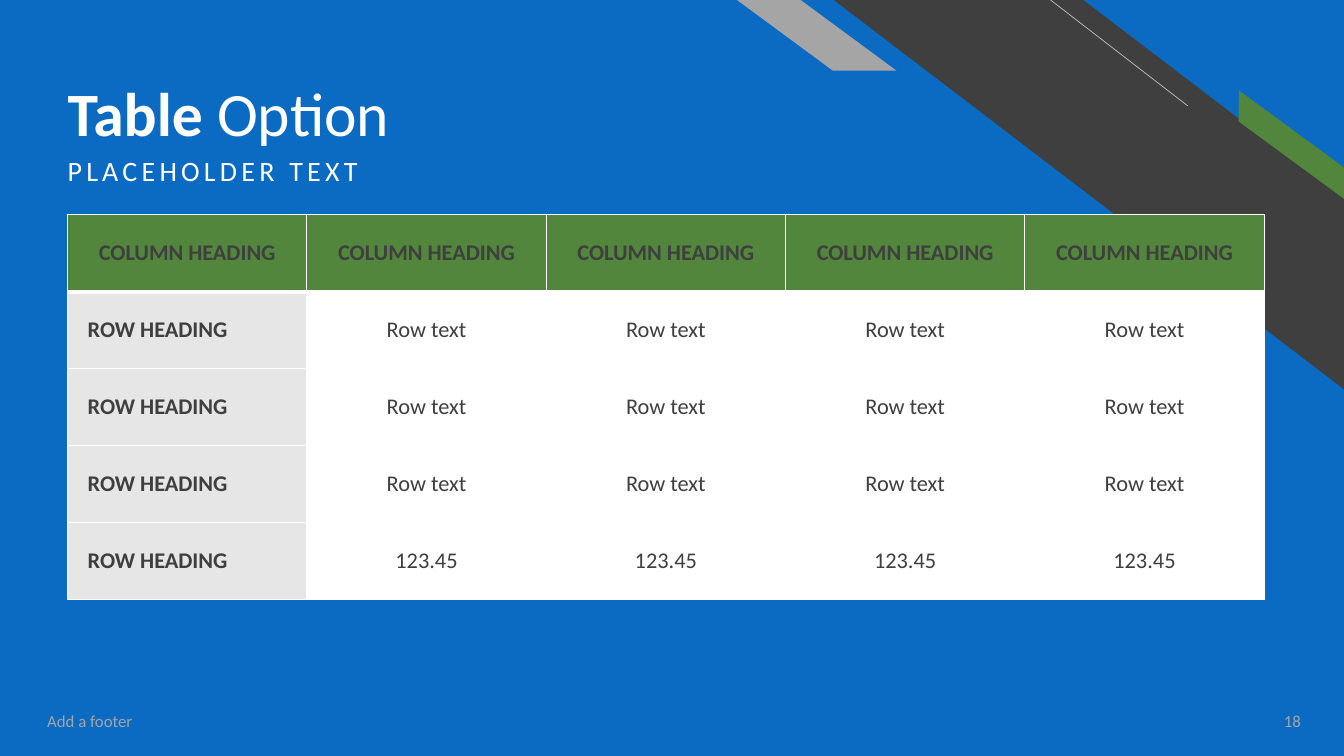
from pptx import Presentation
from pptx.dml.color import RGBColor
from pptx.enum.shapes import MSO_CONNECTOR, MSO_SHAPE
from pptx.enum.text import MSO_ANCHOR, MSO_AUTO_SIZE, PP_ALIGN
from pptx.oxml.ns import qn
from pptx.util import Inches, Pt
from lxml.etree import SubElement

COLOURS = {
    "blue": "0B6BC3",
    "charcoal": "3E3F3E",
    "green": "51863C",
    "grey": "A5A5A5",
    "hairline": "BFBFBF",
    "row_heading": "E6E6E6",
    "table_text": "3F3F3F",
    "white": "FFFFFF",
}
FONT = "Calibri"
COLUMNS = 5
TABLE_ROWS = [
    ["COLUMN HEADING"] * COLUMNS,
    *[["ROW HEADING"] + ["Row text"] * (COLUMNS - 1) for _ in range(3)],
    ["ROW HEADING"] + ["123.45"] * (COLUMNS - 1),
]


def rgb(name):
    return RGBColor.from_string(COLOURS[name])


def set_attributes(target, values):
    for attribute, value in values.items():
        setattr(target, attribute, value)


def place(shape, left, top, width, height):
    box = {"left": left, "top": top, "width": width, "height": height}
    set_attributes(shape, {side: Inches(size) for side, size in box.items()})


def add_run(paragraph, text, size, colour, bold=False):
    run = paragraph.add_run()
    run.text = text
    set_attributes(run.font, {"name": FONT, "size": Pt(size), "bold": bold})
    run.font.color.rgb = rgb(colour)
    return run


def add_block(slide, preset, box, colour, slant=None, flipped=False, rotation=0):
    """Add a plain filled shape; slant is its first adjustment."""
    block = slide.shapes.add_shape(preset, *map(Inches, box))
    block.fill.solid()
    block.fill.fore_color.rgb = rgb(colour)
    block.line.fill.background()
    block.shadow.inherit = False
    block.rotation = rotation
    if slant is not None:
        block.adjustments[0] = slant
    if flipped:
        block.element.spPr.find(qn("a:xfrm")).set("flipH", "1")


def add_hairline(slide, start, end):
    hairline = slide.shapes.add_connector(
        MSO_CONNECTOR.STRAIGHT, *map(Inches, start + end))
    hairline.line.color.rgb = rgb("hairline")
    hairline.line.width = Pt(0.5)
    SubElement(hairline.element.spPr, qn("a:effectLst"))


def add_backdrop(slide):
    add_block(slide, MSO_SHAPE.RECTANGLE, (0, 0, 13.33, 7.5), "blue")
    add_block(slide, MSO_SHAPE.DIAGONAL_STRIPE, (8.27, 0, 5.07, 3.87),
              "charcoal", slant=0.512, flipped=True)
    add_hairline(slide, (11.78, 1.05), (10.42, 0))
    add_block(slide, MSO_SHAPE.PARALLELOGRAM, (12.07, 1.31, 1.48, 0.25),
              "green", slant=0.72, flipped=True, rotation=36.3)
    add_block(slide, MSO_SHAPE.PARALLELOGRAM, (7.31, 0, 1.58, 0.7),
              "grey", slant=1.356, flipped=True)


def format_placeholder(placeholder, box, anchor, space_before=0):
    """Bring a placeholder above the backdrop and return its paragraph."""
    tree = placeholder.element.getparent()
    tree.append(placeholder.element)
    place(placeholder, *box)
    set_attributes(placeholder.text_frame, {
        "vertical_anchor": anchor,
        "word_wrap": True,
        "auto_size": MSO_AUTO_SIZE.NONE,
    })
    paragraph = placeholder.text_frame.paragraphs[0]
    set_attributes(paragraph, {
        "alignment": PP_ALIGN.LEFT,
        "line_spacing": 0.9,
        "space_before": Pt(space_before),
    })
    return paragraph


def fill_title(title):
    paragraph = format_placeholder(title, (0.57, 0.23, 9.11, 1.26), MSO_ANCHOR.BOTTOM)
    title.text_frame.margin_bottom = 0
    add_run(paragraph, "Table ", 44, "white", bold=True)
    add_run(paragraph, "Option", 44, "white")


def fill_subtitle(subtitle):
    paragraph = format_placeholder(
        subtitle, (0.57, 1.51, 8.06, 0.67), MSO_ANCHOR.TOP, space_before=10)
    properties = paragraph._p.get_or_add_pPr()
    properties.set("marL", "0")
    properties.set("indent", "0")
    SubElement(properties, qn("a:buNone"))
    run = add_run(paragraph, "PLACEHOLDER TEXT", 20, "white")
    run.font._element.set("spc", "300")


def add_footer_text(slide, text, box, alignment):
    footer = slide.shapes.add_textbox(*map(Inches, box))
    set_attributes(footer.text_frame, {
        "word_wrap": True, "vertical_anchor": MSO_ANCHOR.MIDDLE})
    paragraph = footer.text_frame.paragraphs[0]
    paragraph.alignment = alignment
    add_run(paragraph, text, 12, "grey")


def add_borders(cell, widths):
    """Draw white borders; widths maps L, R, T and B to points."""
    properties = cell._tc.get_or_add_tcPr()
    for side, width in widths.items():
        border = SubElement(properties, qn(f"a:ln{side}"), w=str(Pt(width)))
        fill = SubElement(border, qn("a:solidFill"))
        SubElement(fill, qn("a:srgbClr"), val=COLOURS["white"])


def fill_cell(cell, text, row, column):
    is_header = row == 0
    is_row_heading = column == 0 and not is_header
    add_borders(cell, {"L": 1, "R": 1, "T": 3 if row == 1 else 1,
                       "B": 3 if is_header else 1})
    cell.fill.solid()
    cell.fill.fore_color.rgb = rgb(
        "green" if is_header else "row_heading" if is_row_heading else "white")
    set_attributes(cell, {
        "vertical_anchor": MSO_ANCHOR.MIDDLE,
        "margin_left": Inches(0.2 if is_row_heading else 0.1),
    })
    paragraph = cell.text_frame.paragraphs[0]
    paragraph.alignment = PP_ALIGN.LEFT if is_row_heading else PP_ALIGN.CENTER
    add_run(paragraph, text, 16, "table_text", bold=is_header or is_row_heading)


def add_option_table(slide):
    table = slide.shapes.add_table(
        len(TABLE_ROWS), COLUMNS, *map(Inches, (0.67, 2.13, 11.87, 3.82))).table
    set_attributes(table, {"first_col": True, "horz_banding": False})
    for row, texts in enumerate(TABLE_ROWS):
        for column, text in enumerate(texts):
            fill_cell(table.cell(row, column), text, row, column)


def main():
    deck = Presentation()
    set_attributes(deck, {"slide_width": Inches(13.33), "slide_height": Inches(7.5)})
    slide = deck.slides.add_slide(deck.slide_layouts[1])
    add_backdrop(slide)
    fill_subtitle(slide.placeholders[1])
    add_footer_text(slide, "Add a footer", (0.37, 6.95, 4.5, 0.4), PP_ALIGN.LEFT)
    add_footer_text(slide, "18", (12.19, 6.95, 0.81, 0.4), PP_ALIGN.RIGHT)
    fill_title(slide.shapes.title)
    add_option_table(slide)
    deck.save("out.pptx")


if __name__ == "__main__":
    main()
